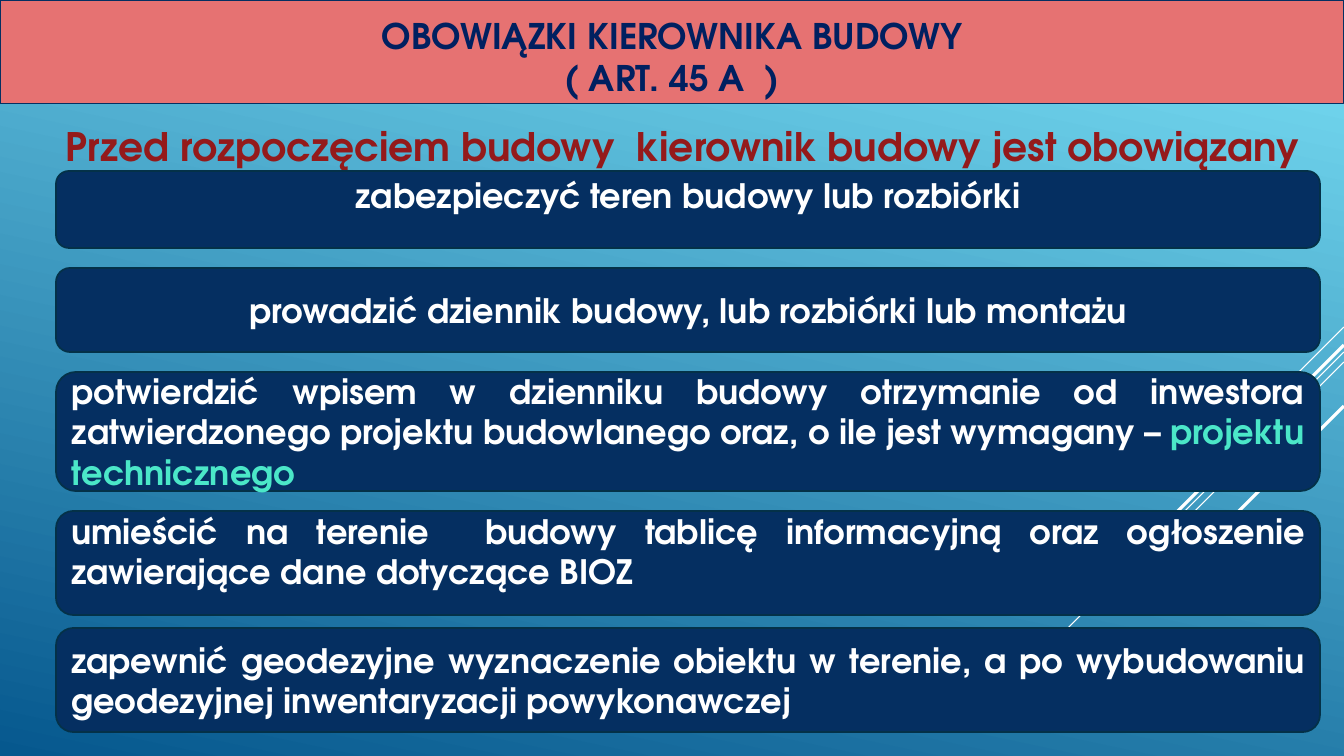
from dataclasses import dataclass

import pptx
import pptx.dml.color
import pptx.enum.shapes
import pptx.enum.text
import pptx.oxml.ns
import pptx.util
from lxml import etree

EMU_PER_PX = 914400 / 100.8
SLIDE_WIDTH, SLIDE_HEIGHT = 1344, 756
BOX_LEFT, BOX_WIDTH = 56, 1264
SIDE_INSET, EDGE_INSET = 10, 5

ALIGN = pptx.enum.text.PP_ALIGN
ANCHOR = pptx.enum.text.MSO_ANCHOR


@dataclass(frozen=True)
class Theme:
    font: str = "TeX Gyre Adventor"
    sky: str = "6ED2EB"
    sea: str = "06588E"
    banner: str = "E67272"
    navy: str = "052F61"
    outline: str = "043148"
    title: str = "002060"
    lead: str = "941A1B"
    white: str = "FFFFFF"
    mint: str = "4BE7C8"
    title_size: float = 25.2
    lead_size: float = 28
    duty_size: float = 24


THEME = Theme()


@dataclass(frozen=True)
class Duty:
    top: int
    height: int
    text: str
    highlight: str = ""
    align: ALIGN = ALIGN.JUSTIFY
    top_inset: int = EDGE_INSET
    bottom_inset: int = EDGE_INSET


@dataclass(frozen=True)
class Ray:
    """A 45° line going down and left from the right edge of the slide."""
    start: int
    reach: int
    weight: float


DUTIES = [
    Duty(171, 77, "zabezpieczyć teren budowy lub rozbiórki",
         align=ALIGN.CENTER, top_inset=0, bottom_inset=28),
    Duty(268, 84, "prowadzić dziennik budowy, lub rozbiórki lub montażu",
         align=ALIGN.CENTER),
    Duty(372, 119, "potwierdzić wpisem w dzienniku budowy otrzymanie od inwestora "
         "zatwierdzonego projektu budowlanego oraz, o ile jest wymagany – ",
         highlight="projektu technicznego"),
    Duty(511, 104, "umieścić na terenie  budowy tablicę informacyjną oraz "
         "ogłoszenie zawierające dane dotyczące BIOZ",
         top_inset=0, bottom_inset=24),
    Duty(628, 104, "zapewnić geodezyjne wyznaczenie obiektu w terenie, a po "
         "wybudowaniu geodezyjnej inwentaryzacji powykonawczej"),
]

RAYS = [
    Ray(327, 101, 0.75),
    Ray(352, 329, 0.75),
    Ray(362, 209, 0.75),
    Ray(345, 193, 2.25),
    Ray(406, 140, 2.25),
]


def px(length: int) -> pptx.util.Emu:
    return pptx.util.Emu(round(length * EMU_PER_PX))


def rgb(value: str) -> pptx.dml.color.RGBColor:
    return pptx.dml.color.RGBColor.from_string(value)


def place(shape, left: int, top: int, width: int, height: int) -> None:
    shape.left, shape.top = px(left), px(top)
    shape.width, shape.height = px(width), px(height)


def paint(shape, fill: str, line: str, weight: float) -> None:
    shape.fill.solid()
    shape.fill.fore_color.rgb = rgb(fill)
    shape.line.color.rgb = rgb(line)
    shape.line.width = pptx.util.Pt(weight)


def set_frame(shape, anchor: ANCHOR, top: int = EDGE_INSET, bottom: int = EDGE_INSET):
    """Set wrapping, anchor and insets, and return the first paragraph."""
    frame = shape.text_frame
    frame.word_wrap = True
    frame.auto_size = pptx.enum.text.MSO_AUTO_SIZE.NONE
    frame.vertical_anchor = anchor
    frame.margin_left = frame.margin_right = px(SIDE_INSET)
    frame.margin_top, frame.margin_bottom = px(top), px(bottom)
    return frame.paragraphs[0]


def add_run(paragraph, text: str, size: float, color: str) -> None:
    run = paragraph.add_run()
    run.text = text
    run.font.name = THEME.font
    run.font.size = pptx.util.Pt(size)
    run.font.bold = True
    run.font.color.rgb = rgb(color)


def paint_background(slide) -> None:
    fill = slide.background.fill
    fill.gradient()
    fill.gradient_angle = 258
    for stop, position, color in zip(fill.gradient_stops, (0.1, 1), (THEME.sky, THEME.sea)):
        stop.position = position
        stop.color.rgb = rgb(color)


def add_ray(slide, ray: Ray) -> None:
    connector = slide.shapes.add_connector(
        pptx.enum.shapes.MSO_CONNECTOR.STRAIGHT,
        px(SLIDE_WIDTH), px(ray.start),
        px(SLIDE_WIDTH - ray.reach), px(ray.start + ray.reach))
    connector.line.color.rgb = rgb(THEME.white)
    connector.line.width = pptx.util.Pt(ray.weight)
    etree.SubElement(connector._element.spPr, pptx.oxml.ns.qn("a:effectLst"))


def fill_title(shape) -> None:
    place(shape, 0, 0, SLIDE_WIDTH, 104)
    paint(shape, THEME.banner, THEME.navy, 0.75)
    paragraph = set_frame(shape, ANCHOR.BOTTOM)
    paragraph.alignment = ALIGN.CENTER
    add_run(paragraph, "OBOWIĄZKI KIEROWNIKA BUDOWY", THEME.title_size, THEME.title)
    paragraph.add_line_break()
    add_run(paragraph, "( ART. 45 A  )", THEME.title_size, THEME.title)


def fill_lead(shape) -> None:
    place(shape, BOX_LEFT, 117, BOX_WIDTH, 54)
    paragraph = set_frame(shape, ANCHOR.TOP)
    paragraph.alignment = ALIGN.JUSTIFY
    paragraph.space_before = pptx.util.Pt(0)
    properties = paragraph._p.get_or_add_pPr()
    properties.set("marL", "0")
    properties.set("indent", "0")
    etree.SubElement(properties, pptx.oxml.ns.qn("a:buNone"))
    add_run(paragraph, "Przed rozpoczęciem budowy  kierownik budowy jest obowiązany",
            THEME.lead_size, THEME.lead)


def add_duty(slide, duty: Duty) -> None:
    shape = slide.shapes.add_shape(
        pptx.enum.shapes.MSO_SHAPE.ROUNDED_RECTANGLE,
        px(BOX_LEFT), px(duty.top), px(BOX_WIDTH), px(duty.height))
    shape.shadow.inherit = False
    paint(shape, THEME.navy, THEME.outline, 1.25)
    paragraph = set_frame(shape, ANCHOR.MIDDLE, duty.top_inset, duty.bottom_inset)
    paragraph.alignment = duty.align
    add_run(paragraph, duty.text, THEME.duty_size, THEME.white)
    if duty.highlight:
        add_run(paragraph, duty.highlight, THEME.duty_size, THEME.mint)


def main() -> None:
    presentation = pptx.Presentation()
    presentation.slide_width = px(SLIDE_WIDTH)
    presentation.slide_height = px(SLIDE_HEIGHT)
    slide = presentation.slides.add_slide(presentation.slide_layouts[1])
    paint_background(slide)
    fill_title(slide.shapes.title)
    fill_lead(slide.placeholders[1])
    for ray in RAYS:
        add_ray(slide, ray)
    for duty in DUTIES:
        add_duty(slide, duty)
    presentation.save("out.pptx")


if __name__ == "__main__":
    main()
